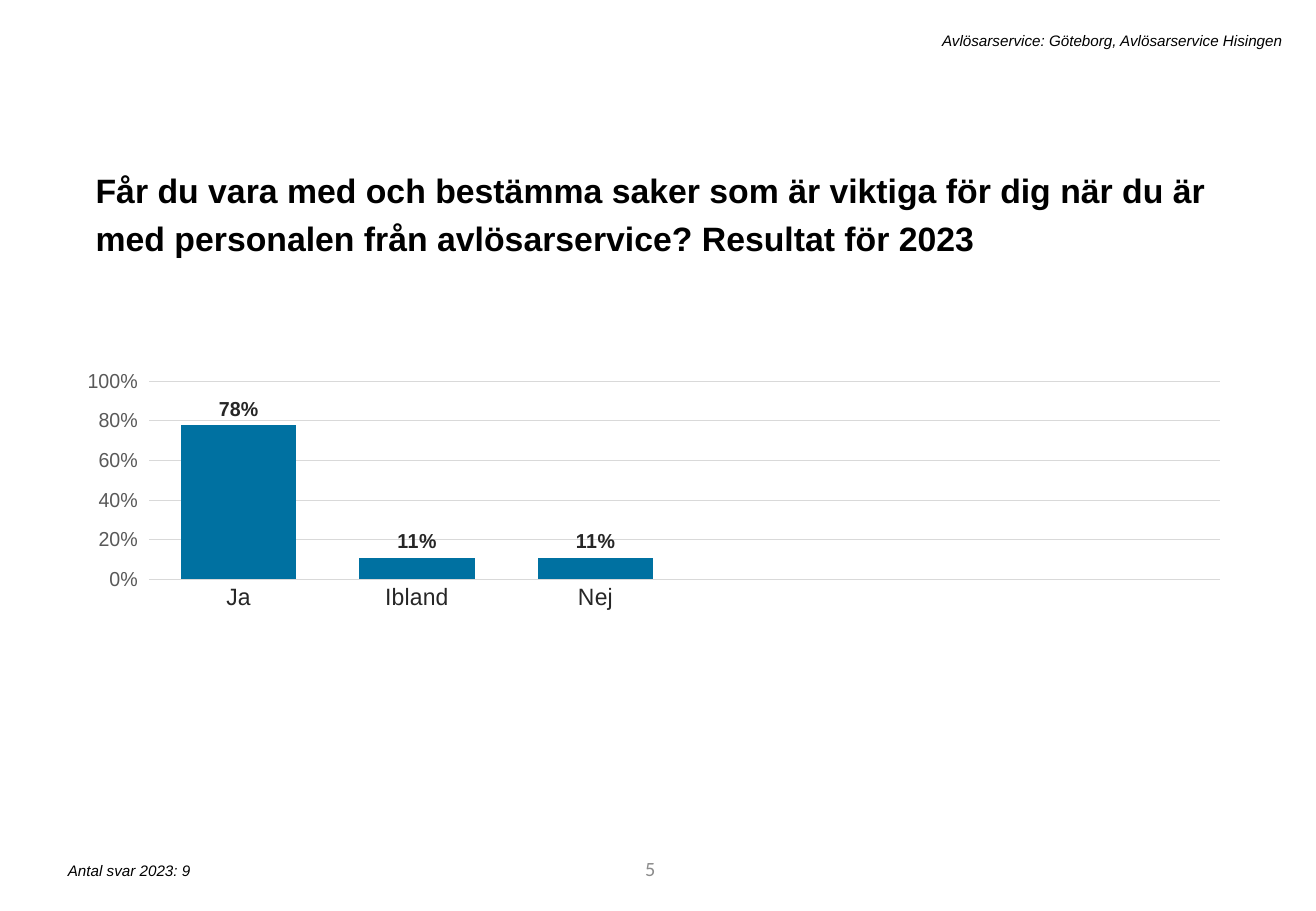
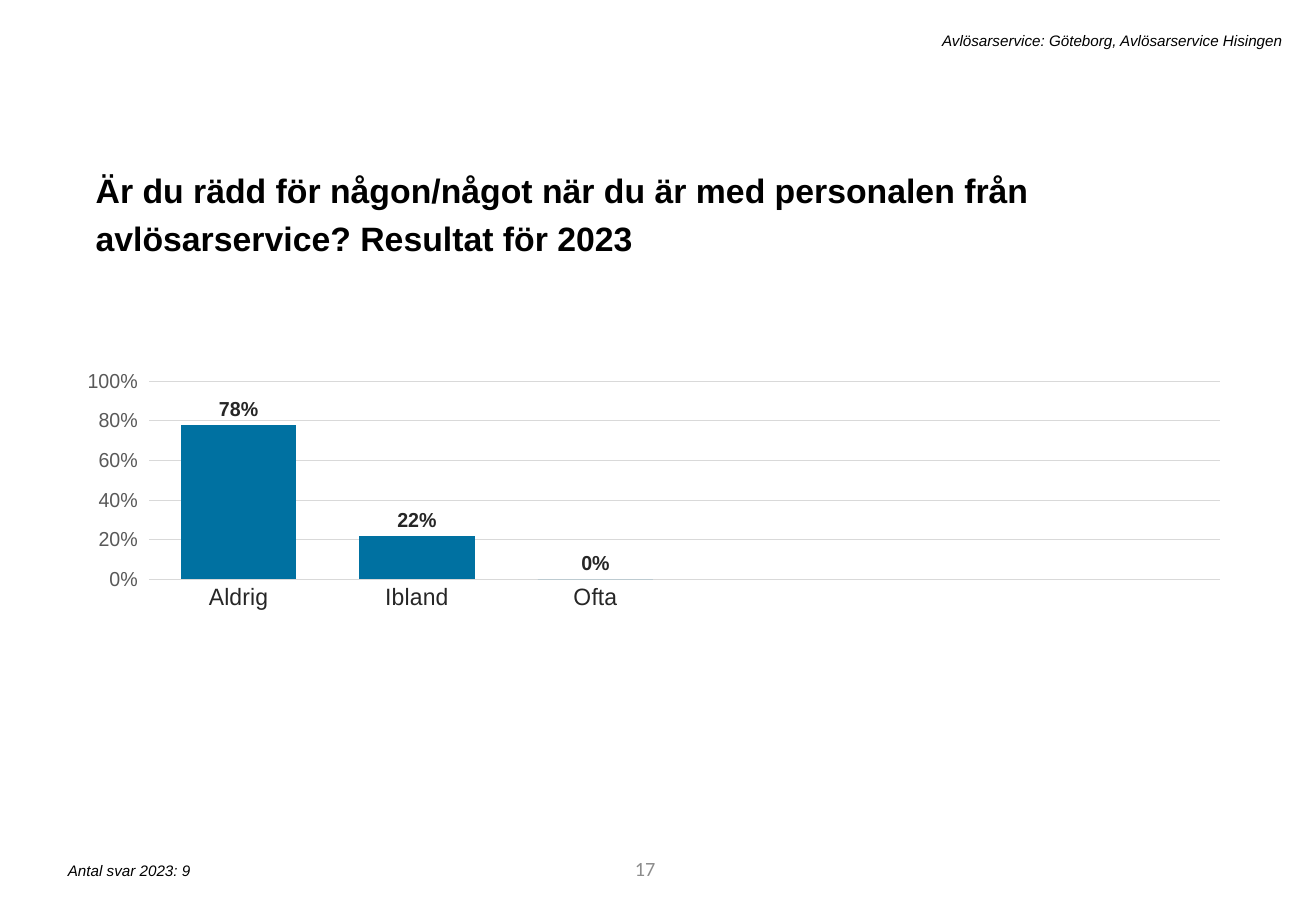
from dataclasses import dataclass

from lxml.etree import SubElement
from pptx import Presentation
from pptx.chart.chart import Chart
from pptx.chart.data import CategoryChartData
from pptx.dml.color import RGBColor
from pptx.enum.chart import XL_CHART_TYPE, XL_LABEL_POSITION, XL_TICK_MARK
from pptx.enum.text import MSO_ANCHOR, PP_ALIGN
from pptx.oxml.ns import qn
from pptx.slide import Slide
from pptx.text.text import Font
from pptx.util import Cm, Pt

BLACK = "000000"
LABEL_DARK = "262626"
AXIS_GREY = "595959"
GRID_GREY = "D9D9D9"
PAGE_GREY = "8C8C8C"
BAR_BLUE = "0071A1"
CATEGORY_SLOTS = 6
UNIT = "Avlösarservice: Göteborg, Avlösarservice Hisingen"
RESPONSES = "Antal svar 2023: 9"


@dataclass(frozen=True)
class Box:
    left: float
    top: float
    width: float
    height: float

    def lengths(self) -> tuple[Cm, Cm, Cm, Cm]:
        return Cm(self.left), Cm(self.top), Cm(self.width), Cm(self.height)


@dataclass(frozen=True)
class Question:
    title: str
    page: int
    answers: dict[str, float]


PAGE_BOX = Box(7.75, 17.65, 6.2, 1.02)
TITLE_BOX = Box(1.75, 3.25, 23.88, 1.19)
UNIT_BOX = Box(4.55, 0.53, 22.5, 0.64)
RESPONSES_BOX = Box(1.17, 17.88, 11.2, 0.64)
CHART_BOX = Box(1.83, 6.43, 23.88, 10.03)
PLOT_AREA = {"x": 0.025, "y": 0.154, "w": 0.966, "h": 0.413}

QUESTIONS = [
    Question(
        "Får du vara med och bestämma saker som är viktiga för dig när du är "
        "med personalen från avlösarservice? Resultat för 2023",
        5,
        {"Ja": 0.78, "Ibland": 0.11, "Nej": 0.11},
    ),
    Question(
        "Är du rädd för någon/något när du är med personalen från "
        "avlösarservice? Resultat för 2023",
        17,
        {"Aldrig": 0.78, "Ibland": 0.22, "Ofta": 0},
    ),
]


def color(value: str) -> RGBColor:
    return RGBColor.from_string(value)


def set_font(font: Font, size: float, fill: str = BLACK, name: str = "Arial",
             bold: bool = False, italic: bool = False) -> None:
    font.size = Pt(size)
    font.name = name
    font.bold = bold
    font.italic = italic
    font.color.rgb = color(fill)


def add_text(slide: Slide, box: Box, text: str, *, size: float,
             fill: str = BLACK, name: str = "Arial", bold: bool = False,
             italic: bool = False, align: PP_ALIGN = PP_ALIGN.LEFT,
             anchor: MSO_ANCHOR = MSO_ANCHOR.TOP,
             line_spacing: float = 1.0, space_before: float = 0) -> None:
    frame = slide.shapes.add_textbox(*box.lengths()).text_frame
    frame.word_wrap = True
    frame.vertical_anchor = anchor
    paragraph = frame.paragraphs[0]
    paragraph.alignment = align
    paragraph.line_spacing = line_spacing
    paragraph.space_before = Pt(space_before)
    run = paragraph.add_run()
    run.text = text
    set_font(run.font, size, fill, name, bold, italic)


def place_plot_area(chart: Chart) -> None:
    plot_area = chart.plots[0]._element.getparent()
    layout = plot_area.find(qn("c:layout"))
    if layout is None:
        layout = SubElement(plot_area, qn("c:layout"))
        plot_area.insert(0, layout)
    manual = SubElement(layout, qn("c:manualLayout"))
    settings = {"layoutTarget": "inner", "xMode": "edge", "yMode": "edge"}
    for tag, value in (settings | PLOT_AREA).items():
        SubElement(manual, qn(f"c:{tag}")).set("val", str(value))


def format_axes(chart: Chart) -> None:
    category_axis = chart.category_axis
    category_axis.major_tick_mark = XL_TICK_MARK.NONE
    set_font(category_axis.tick_labels.font, 14, LABEL_DARK)

    value_axis = chart.value_axis
    value_axis.minimum_scale = 0
    value_axis.maximum_scale = 1
    value_axis.major_unit = 0.2
    value_axis.major_tick_mark = XL_TICK_MARK.OUTSIDE
    value_axis.format.line.fill.background()
    value_axis.tick_labels.number_format = "0%"
    value_axis.tick_labels.number_format_is_linked = False
    set_font(value_axis.tick_labels.font, 12, AXIS_GREY)

    for line in (category_axis.format.line, value_axis.major_gridlines.format.line):
        line.color.rgb = color(GRID_GREY)
        line.width = Pt(0.75)


def format_bars(chart: Chart) -> None:
    plot = chart.plots[0]
    plot.gap_width = 55
    plot.vary_by_categories = False
    series = plot.series[0]
    series.format.fill.solid()
    series.format.fill.fore_color.rgb = color(BAR_BLUE)
    labels = series.data_labels
    labels.show_value = True
    labels.number_format = "0%"
    labels.number_format_is_linked = False
    labels.position = XL_LABEL_POSITION.OUTSIDE_END
    set_font(labels.font, 12, LABEL_DARK, bold=True)


def add_answer_chart(slide: Slide, answers: dict[str, float]) -> None:
    unused = CATEGORY_SLOTS - len(answers)
    data = CategoryChartData(number_format="0%")
    data.categories = [*answers, *[""] * unused]
    data.add_series("Series 1", [*answers.values(), *[None] * unused])
    chart = slide.shapes.add_chart(
        XL_CHART_TYPE.COLUMN_CLUSTERED, *CHART_BOX.lengths(), data
    ).chart
    chart.has_title = False
    chart.has_legend = False
    set_font(chart.font, 10)
    place_plot_area(chart)
    format_axes(chart)
    format_bars(chart)


def add_question_slide(presentation: Presentation, question: Question) -> None:
    slide = presentation.slides.add_slide(presentation.slide_layouts[6])
    add_text(slide, PAGE_BOX, str(question.page), size=12, fill=PAGE_GREY,
             name="Calibri", align=PP_ALIGN.RIGHT, anchor=MSO_ANCHOR.MIDDLE)
    add_answer_chart(slide, question.answers)
    add_text(slide, TITLE_BOX, question.title, size=20, bold=True,
             line_spacing=1.2, space_before=10)
    add_text(slide, UNIT_BOX, UNIT, size=9, italic=True, align=PP_ALIGN.RIGHT)
    add_text(slide, RESPONSES_BOX, RESPONSES, size=9, italic=True)


def main() -> None:
    presentation = Presentation()
    presentation.slide_width = Cm(27.51)
    presentation.slide_height = Cm(19.05)
    for question in QUESTIONS:
        add_question_slide(presentation, question)
    presentation.save("out.pptx")


if __name__ == "__main__":
    main()
